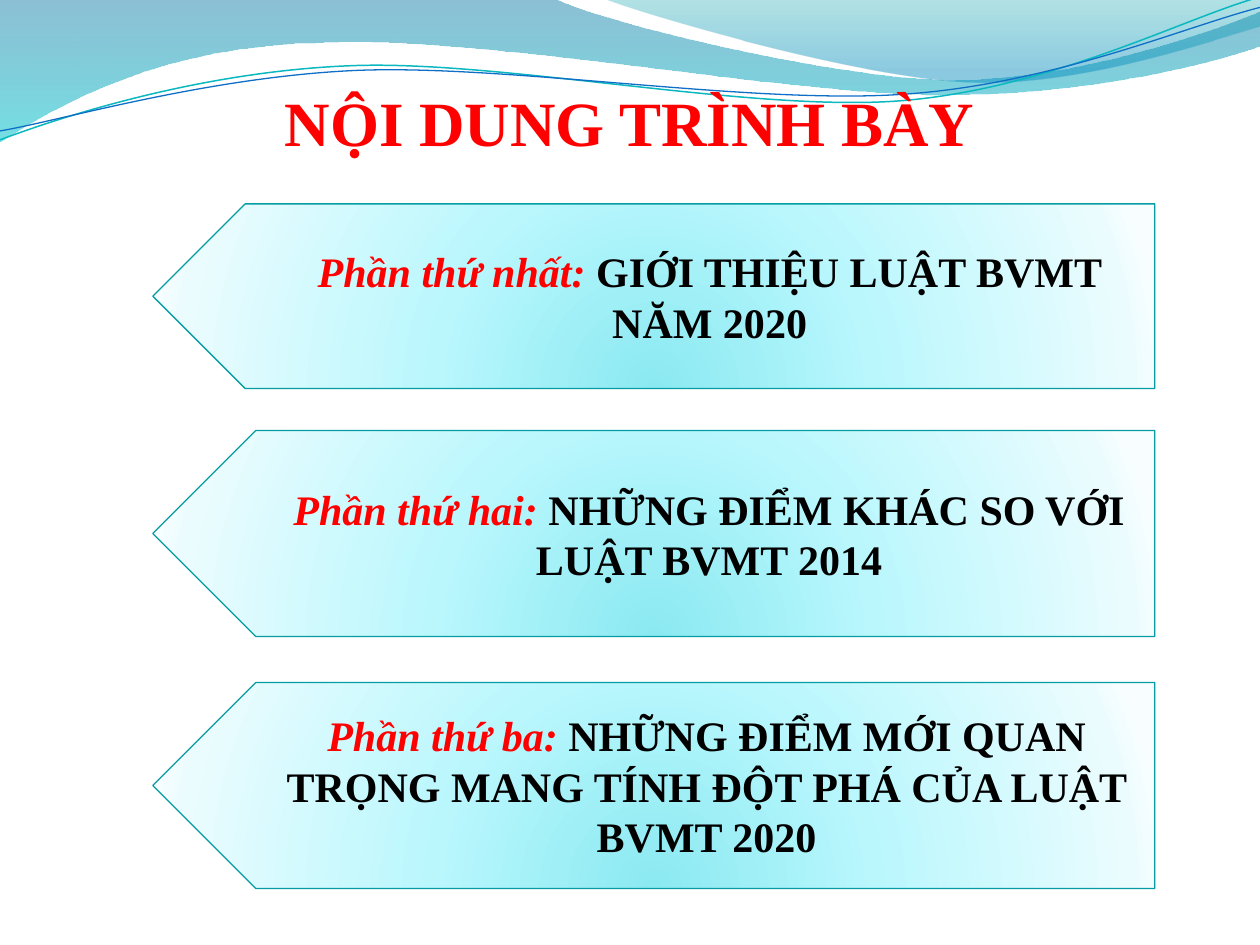
import pptx
import pptx.dml.color
import pptx.enum.shapes
import pptx.enum.text
import pptx.oxml
import pptx.oxml.ns
import pptx.util

Cm, Pt = pptx.util.Cm, pptx.util.Pt
RGBColor = pptx.dml.color.RGBColor
ALIGN, ANCHOR = pptx.enum.text.PP_ALIGN, pptx.enum.text.MSO_ANCHOR
qn, nsdecls = pptx.oxml.ns.qn, pptx.oxml.ns.nsdecls

RED = RGBColor(0xFF, 0x00, 0x00)
BLACK = RGBColor(0x00, 0x00, 0x00)
ARROW_EDGE = RGBColor(0x06, 0x9C, 0xA3)
WAVE_TEAL = RGBColor(0x0A, 0xB8, 0xBF)
WAVE_BLUE = RGBColor(0x0F, 0x6F, 0xC6)

# Gradient stops: position %, colour, opacity %
BACK_STOPS = [(0, RGBColor(0x00, 0x74, 0xA1), 45), (100, RGBColor(0x00, 0xC6, 0xCF), 55)]
FRONT_STOPS = [(0, RGBColor(0x00, 0xA1, 0xA9), 30), (80, RGBColor(0x00, 0x8B, 0xBF), 45)]
ARROW_STOPS = [(0, RGBColor(0x8B, 0xE9, 0xF1), 100), (43, RGBColor(0xB9, 0xF7, 0xFD), 100),
               (93, RGBColor(0xEA, 0xFC, 0xFE), 100), (100, RGBColor(0xF8, 0xFE, 0xFF), 100)]
DOWNWARD = '<a:lin ang="5400000" scaled="0"/>'
RADIAL = ('<a:path path="circle"><a:fillToRect l="50000" t="130000" '
          'r="50000" b="-30000"/></a:path>')

# Wave outlines in cm: a start, then line ends (1 point) or Bezier curves (3 points)
BACK_WAVE = [[(0, -0.03)], [(11.18, -0.03)],
             [(12.09, 0.43), (16.87, 1.6), (19.25, 1.6)],
             [(21.67, 1.6), (24.33, 0.66), (25.4, 0.23)], [(25.43, 0.91)],
             [(24.97, 1.12), (22.1, 1.93), (18.95, 1.91)],
             [(15.8, 1.91), (9.7, 0.71), (6.53, 0.86)],
             [(3.28, 0.89), (1.17, 2.11), (-0.03, 2.87)]]
FRONT_WAVE = [[(12.17, -0.03)], [(12.93, 0.28), (17.32, 1.57), (19.53, 1.65)],
              [(21.74, 1.75), (24.41, 0.81), (25.4, 0.53)], [(25.4, 0)]]
# These two are drawn level and then tilted
TILT = 357.3
TEAL_WAVE = [[(-0.05, 2.22)], [(1.19, 1.82), (4.02, 1.04), (7.05, 1.06)],
             [(10.05, 1.07), (15.02, 2.37), (18.08, 2.29)],
             [(21.13, 2.2), (23.87, 0.91), (25.41, 0.55)]]
BLUE_WAVE = [[(-0.04, 2.04)], [(1.16, 1.9), (4.18, 1.15), (7.2, 1.16)],
             [(10.25, 1.18), (15.13, 2.23), (18.18, 2.16)],
             [(21.21, 2.1), (23.93, 1.06), (25.45, 0.75)]]

# Top, height, text indent (cm), label, heading
PARTS = [
    (4.11, 3.72, 0.98, "Phần thứ nhất: ", "GIỚI THIỆU LUẬT BVMT NĂM 2020"),
    (8.68, 4.15, 0.96, "Phần thứ hai: ", "NHỮNG ĐIỂM KHÁC SO VỚI LUẬT BVMT 2014"),
    (13.76, 4.15, 0.86, "Phần thứ ba: ",
     "NHỮNG ĐIỂM MỚI QUAN TRỌNG MANG TÍNH ĐỘT PHÁ CỦA LUẬT BVMT 2020"),
]


def apply_format(target, values):
    for name, value in values.items():
        setattr(target, name, value)


def add_run(paragraph, text, size, color, italic=False):
    run = paragraph.add_run()
    run.text = text
    run.font.color.rgb = color
    apply_format(run.font, {"name": "Times New Roman", "size": Pt(size),
                            "bold": True, "italic": italic})


def fill_gradient(shape, stops, direction):
    stop_xml = "".join(
        f'<a:gs pos="{pos * 1000}"><a:srgbClr val="{color}">'
        f'<a:alpha val="{opacity * 1000}"/></a:srgbClr></a:gs>'
        for pos, color, opacity in stops)
    gradient = pptx.oxml.parse_xml(
        f'<a:gradFill {nsdecls("a")} rotWithShape="1">'
        f'<a:gsLst>{stop_xml}</a:gsLst>{direction}</a:gradFill>')
    shape.fill.background()
    properties = shape._element.spPr
    properties.replace(properties.find(qn("a:noFill")), gradient)


def add_wave(shapes, left, top, outline, closed):
    start, *rest = [(x * 100, y * 100) for segment in outline for x, y in segment]
    builder = shapes.build_freeform(*start, scale=Cm(0.01))
    builder.add_line_segments(rest, close=closed)
    wave = builder.convert_to_shape(left, top)
    wave.shadow.inherit = False

    # Join each three control points into one Bezier curve
    lines = iter(list(wave._element.iter(qn("a:lnTo"))))
    for segment in outline[1:]:
        steps = [next(lines) for _ in segment]
        if len(steps) == 3:
            curve = pptx.oxml.parse_xml(f'<a:cubicBezTo {nsdecls("a")}/>')
            steps[0].addprevious(curve)
            for step in steps:
                curve.append(step[0])
                step.getparent().remove(step)
    return wave


def add_waves(slide, left, top):
    # Filled bands
    for outline, stops in ((BACK_WAVE, BACK_STOPS), (FRONT_WAVE, FRONT_STOPS)):
        band = add_wave(slide.shapes, left, top, outline, True)
        fill_gradient(band, stops, DOWNWARD)
        band.line.fill.background()

    # Thin curves
    curves = slide.shapes.add_group_shape()
    for outline, color, width in ((TEAL_WAVE, WAVE_TEAL, 0.85), (BLUE_WAVE, WAVE_BLUE, 0.75)):
        curve = add_wave(curves.shapes, left, top, outline, False)
        curve.rotation = TILT
        curve.fill.background()
        curve.line.color.rgb = color
        curve.line.width = Pt(width)


def add_title(slide, left, top, width, height):
    title = slide.shapes.title
    apply_format(title, {"left": left, "top": top, "width": width, "height": height})
    apply_format(title.text_frame, {"word_wrap": True, "vertical_anchor": ANCHOR.MIDDLE,
                                    "auto_size": pptx.enum.text.MSO_AUTO_SIZE.NONE})
    paragraph = title.text_frame.paragraphs[0]
    paragraph.alignment = ALIGN.CENTER
    add_run(paragraph, "NỘI DUNG TRÌNH BÀY", 36, RED)
    # Bring the title in front of the waves
    slide.shapes[-1]._element.addnext(title._element)


def add_part(slide, left, top, width, height, indent, label, heading):
    part = slide.shapes.add_group_shape()

    # Arrow pointing left
    arrow = part.shapes.add_shape(pptx.enum.shapes.MSO_SHAPE.PENTAGON,
                                  left, top, width, height)
    arrow.rotation = 180
    arrow.shadow.inherit = False
    fill_gradient(arrow, ARROW_STOPS, RADIAL)
    arrow.line.color.rgb = ARROW_EDGE
    arrow.line.width = Pt(0.75)

    # Label and heading
    caption = part.shapes.add_textbox(left + indent, top, width - indent + Cm(0.02), height)
    apply_format(caption.text_frame, {
        "word_wrap": True, "vertical_anchor": ANCHOR.MIDDLE,
        "margin_left": Cm(1.73), "margin_right": Cm(0.48),
        "margin_top": Cm(0.25), "margin_bottom": Cm(0.25)})
    paragraph = caption.text_frame.paragraphs[0]
    apply_format(paragraph, {"alignment": ALIGN.CENTER, "space_after": Pt(6)})
    add_run(paragraph, label, 24, RED, italic=True)
    add_run(paragraph, heading, 24, BLACK)


def main():
    deck = pptx.Presentation()
    apply_format(deck, {"slide_width": Cm(25.4), "slide_height": Cm(19.05)})
    slide = deck.slides.add_slide(deck.slide_layouts[5])
    add_waves(slide, Cm(0), Cm(0))
    add_title(slide, Cm(0.86), Cm(1.55), Cm(23.67), Cm(1.8))
    for top, height, indent, label, heading in PARTS:
        add_part(slide, Cm(3.08), Cm(top), Cm(20.2), Cm(height), Cm(indent), label, heading)
    deck.save("out.pptx")


if __name__ == "__main__":
    main()
